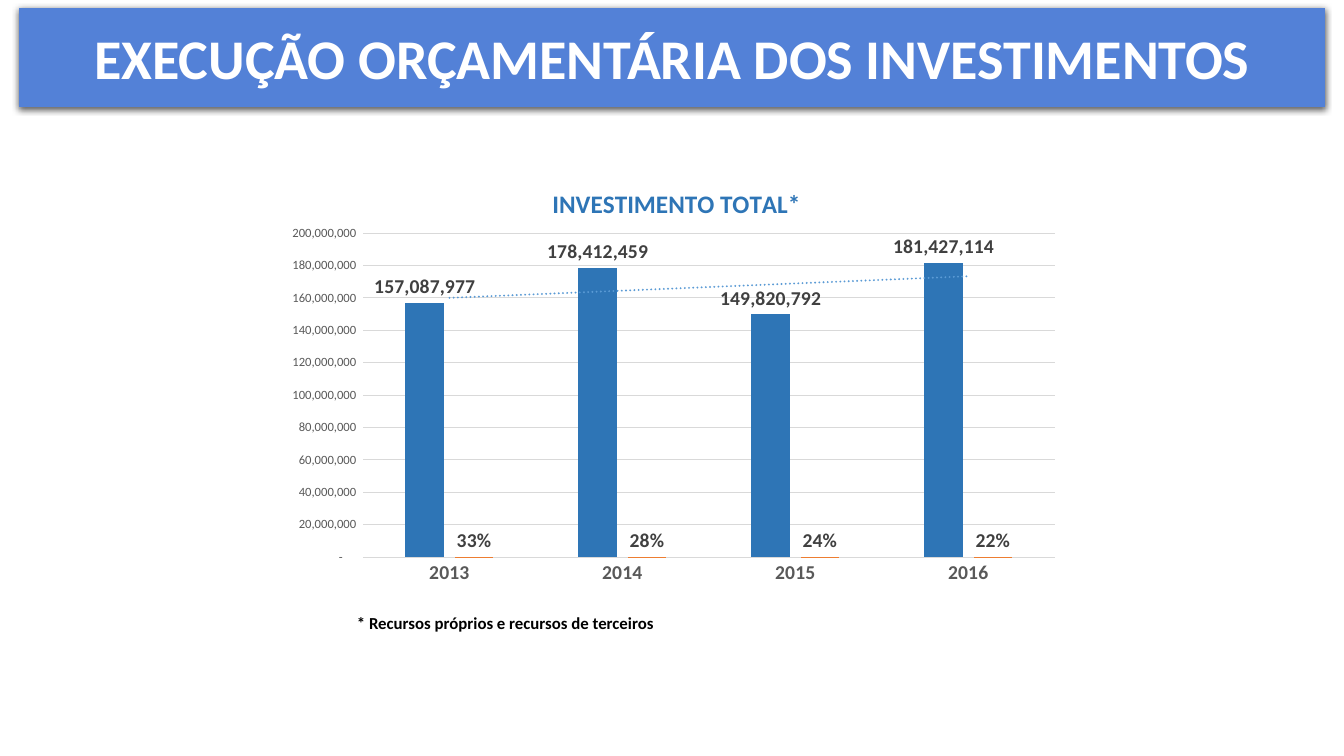
from dataclasses import dataclass

from lxml import etree
from pptx import Presentation
from pptx.chart.data import CategoryChartData
from pptx.dml.color import RGBColor
from pptx.enum.chart import XL_CHART_TYPE, XL_LABEL_POSITION, XL_TICK_MARK
from pptx.enum.text import MSO_ANCHOR, MSO_AUTO_SIZE, PP_ALIGN
from pptx.oxml import parse_xml
from pptx.oxml.ns import nsdecls, qn
from pptx.util import Emu, Pt

COLUMNS = XL_CHART_TYPE.COLUMN_CLUSTERED
OUTSIDE_END = XL_LABEL_POSITION.OUTSIDE_END
NO_TICK = XL_TICK_MARK.NONE
MIDDLE = MSO_ANCHOR.MIDDLE
NO_FIT = MSO_AUTO_SIZE.NONE
CENTER = PP_ALIGN.CENTER
LEFT = PP_ALIGN.LEFT

PIXELS_PER_INCH = 100.8
TITLE_ONLY = 5


@dataclass(frozen=True)
class Theme:
    font: str = "Calibri"
    banner: str = "5381D7"
    white: str = "FFFFFF"
    black: str = "000000"
    total: str = "2E75B6"
    share: str = "ED7D31"
    trend: str = "5B9BD5"
    grid: str = "D9D9D9"
    axis_text: str = "595959"
    label_text: str = "404040"
    banner_size: int = 40
    heading_size: int = 18
    label_size: int = 14
    note_size: int = 12
    base_size: int = 10
    scale_size: int = 9


def px(length):
    return Emu(round(length * 914400 / PIXELS_PER_INCH))


def style_font(font, name, size, color, bold=False):
    font.name = name
    font.size = Pt(size)
    font.bold = bold
    font.color.rgb = RGBColor.from_string(color)


def write(frame, text, align=LEFT, **style):
    para = frame.paragraphs[0]
    para.alignment = align
    span = para.add_run()
    span.text = text
    style_font(span.font, **style)


def set_layout(parent, index, target=None, **fractions):
    current = parent.find(qn("c:layout"))
    if current is not None:
        parent.remove(current)
    layout = etree.Element(qn("c:layout"))
    manual = etree.SubElement(layout, qn("c:manualLayout"))
    if target:
        etree.SubElement(manual, qn("c:layoutTarget")).set("val", target)
    for mode in ("xMode", "yMode"):
        etree.SubElement(manual, qn(f"c:{mode}")).set("val", "edge")
    for name, value in fractions.items():
        etree.SubElement(manual, qn(f"c:{name}")).set("val", f"{value:.3f}")
    parent.insert(index, layout)


class SlideBuilder:
    def __init__(self, deck, theme):
        self.theme = theme
        self.page = deck.slides.add_slide(deck.slide_layouts[TITLE_ONLY])

    def banner(self, text, left, top, width, height):
        theme = self.theme
        title = self.page.shapes.title
        title.left, title.top = px(left), px(top)
        title.width, title.height = px(width), px(height)
        properties = title.element.spPr
        properties.append(parse_xml(
            f'<a:prstGeom {nsdecls("a")} prst="roundRect"><a:avLst/></a:prstGeom>'))
        title.fill.solid()
        title.fill.fore_color.rgb = RGBColor.from_string(theme.banner)
        title.line.fill.background()
        properties.append(parse_xml(
            f'<a:effectLst {nsdecls("a")}><a:outerShdw blurRad="{Pt(4.5)}" '
            f'dist="{Pt(1.5)}" dir="5400000" algn="ctr" rotWithShape="0">'
            f'<a:srgbClr val="{theme.black}"><a:alpha val="63000"/></a:srgbClr>'
            '</a:outerShdw></a:effectLst>'))
        frame = title.text_frame
        frame.auto_size = NO_FIT
        frame.word_wrap = True
        frame.vertical_anchor = MIDDLE
        write(frame, text, CENTER, name=theme.font, size=theme.banner_size,
              color=theme.white, bold=True)

    def note(self, text, left, top, width, height):
        theme = self.theme
        box = self.page.shapes.add_textbox(px(left), px(top), px(width), px(height))
        box.text_frame.word_wrap = False
        write(box.text_frame, text, name=theme.font, size=theme.note_size,
              color=theme.black, bold=True)

    def column_chart(self, heading, years, totals, shares, left, top, width, height):
        theme = self.theme
        data = CategoryChartData()
        data.categories = years
        data.add_series("Series 1", totals, "#,##0")
        data.add_series("Series 2", shares, "0%")
        chart = self.page.shapes.add_chart(
            COLUMNS, px(left), px(top), px(width), px(height), data).chart
        style_font(chart.font, theme.font, theme.base_size, theme.black)
        chart.has_legend = False

        chart.has_title = True
        write(chart.chart_title.text_frame, heading, CENTER, name=theme.font,
              size=theme.heading_size, color=theme.total, bold=True)
        chart.chart_title.include_in_layout = False
        set_layout(chart.chart_title._element, 1, x=275 / width, y=20 / height)
        set_layout(chart._chartSpace.chart.plotArea, 0, "inner",
                   x=90 / width, y=71 / height, w=692 / width, h=324 / height)

        plot = chart.plots[0]
        plot.gap_width = 219
        plot.overlap = -27
        plot.vary_by_categories = False
        formats = ((theme.total, "#,##0"), (theme.share, "0%"))
        for series, (color, number_format) in zip(plot.series, formats):
            self.series(series, color, number_format)
        self.trend_line(plot.series[0])
        self.axes(chart)

    def series(self, series, color, number_format):
        theme = self.theme
        series.format.fill.solid()
        series.format.fill.fore_color.rgb = RGBColor.from_string(color)
        series.invert_if_negative = False
        labels = series.data_labels
        labels.show_value = True
        labels.position = OUTSIDE_END
        labels.number_format = number_format
        labels.number_format_is_linked = False
        style_font(labels.font, theme.font, theme.label_size, theme.label_text, True)

    def trend_line(self, series):
        series._element.find(qn("c:cat")).addprevious(parse_xml(
            f'<c:trendline {nsdecls("c", "a")}><c:spPr>'
            f'<a:ln w="{Pt(1.5)}" cap="rnd"><a:solidFill>'
            f'<a:srgbClr val="{self.theme.trend}"/></a:solidFill>'
            '<a:prstDash val="sysDot"/></a:ln></c:spPr>'
            '<c:trendlineType val="linear"/><c:dispRSqr val="0"/>'
            '<c:dispEq val="0"/></c:trendline>'))

    def axes(self, chart):
        theme = self.theme
        years, amounts = chart.category_axis, chart.value_axis
        for axis in (years, amounts):
            axis.major_tick_mark = NO_TICK
            axis.minor_tick_mark = NO_TICK
        style_font(years.tick_labels.font, theme.font, theme.label_size,
                   theme.axis_text, True)
        style_font(amounts.tick_labels.font, theme.font, theme.scale_size,
                   theme.axis_text)
        amounts.minimum_scale = 0
        amounts.maximum_scale = 200000000
        amounts.major_unit = 20000000
        amounts.tick_labels.number_format = (
            r'_-* #,##0_-;\-* #,##0_-;_-* "-"??_-;_-@_')
        amounts.tick_labels.number_format_is_linked = False
        amounts.format.line.fill.background()
        amounts.has_major_gridlines = True
        for line in (years.format.line, amounts.major_gridlines.format.line):
            line.width = Pt(0.75)
            line.color.rgb = RGBColor.from_string(theme.grid)


def main():
    deck = Presentation()
    deck.slide_width, deck.slide_height = px(1344), px(756)
    slide = SlideBuilder(deck, Theme())
    slide.banner("EXECUÇÃO ORÇAMENTÁRIA DOS INVESTIMENTOS", 19, 8, 1306, 99)
    slide.column_chart(
        "INVESTIMENTO TOTAL*",
        ("2013", "2014", "2015", "2016"),
        (157087977, 178412459, 149820792, 181427114),
        (0.33, 0.28, 0.24, 0.22),
        273, 162, 797, 431)
    slide.note("* Recursos próprios e recursos de terceiros", 347, 608, 320, 30)
    deck.save("out.pptx")


if __name__ == "__main__":
    main()
